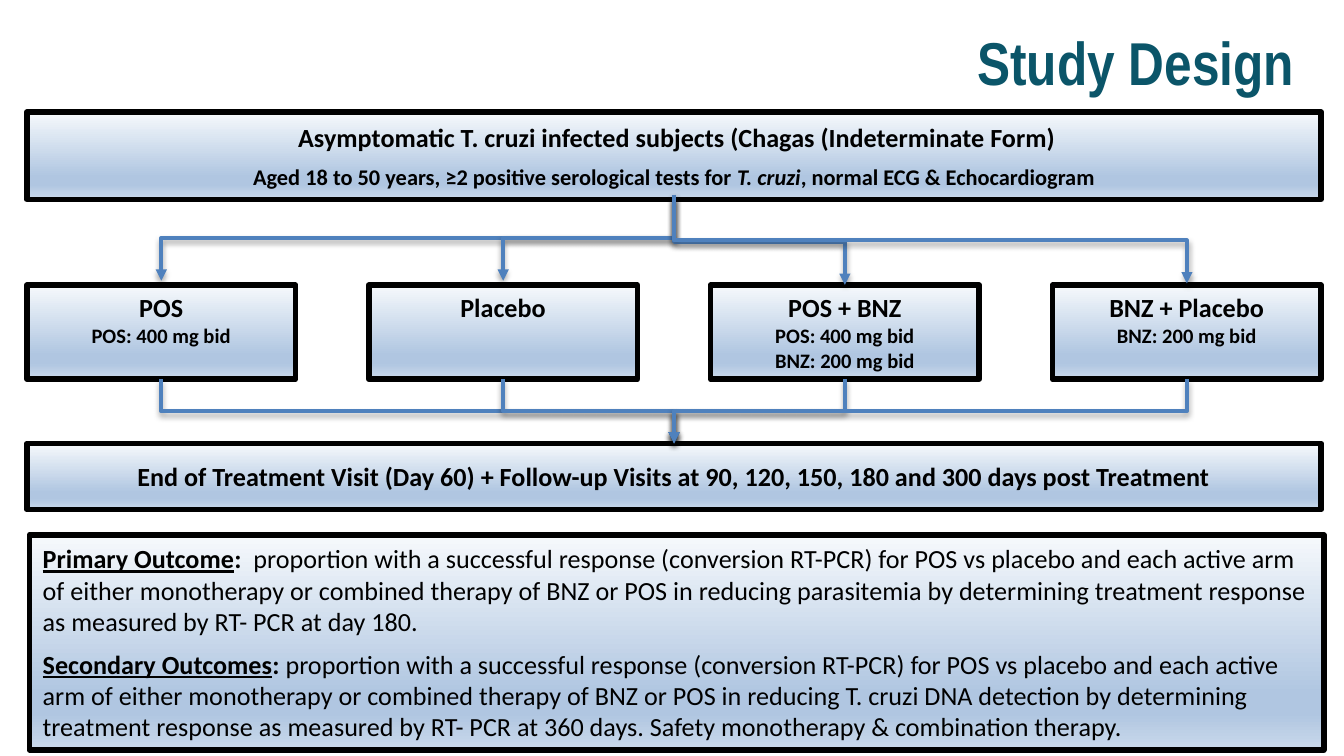
import copy

import pptx
import pptx.dml.color
import pptx.enum.shapes
import pptx.enum.text
import pptx.oxml
import pptx.oxml.ns
import pptx.util

Pt = pptx.util.Pt
RGBColor = pptx.dml.color.RGBColor
ALIGN = pptx.enum.text.PP_ALIGN
ANCHOR = pptx.enum.text.MSO_ANCHOR

TEAL = RGBColor(0x0B, 0x55, 0x69)
BLACK = RGBColor(0, 0, 0)
BLUE = RGBColor(0x4F, 0x81, 0xBD)
PALE = RGBColor(0xF6, 0xF9, 0xFC)
MID = RGBColor(0xB0, 0xC6, 0xE1)
LIGHT = RGBColor(0xCA, 0xD9, 0xEB)
GRADIENT = [(0, PALE), (0.74, MID), (0.83, MID), (1, LIGHT)]

NS = pptx.oxml.ns.nsdecls("a")
ARROWHEAD = f'<a:tailEnd {NS} type="triangle"/>'
SHADOW = (
    f'<a:effectLst {NS}><a:outerShdw blurRad="40000" dist="20000" dir="5400000" rotWithShape="0">'
    '<a:srgbClr val="000000"><a:alpha val="38000"/></a:srgbClr></a:outerShdw></a:effectLst>'
)


def add_panel(left, top, width, height, paragraphs, align=ALIGN.CENTER, anchor=ANCHOR.MIDDLE):
    """Draw a gradient box; a paragraph is (size, space before, [(text, styles)]), styles from "biu"."""
    box = page.shapes.add_shape(
        pptx.enum.shapes.MSO_SHAPE.RECTANGLE, Pt(left), Pt(top), Pt(width), Pt(height))
    box.shadow.inherit = False
    box.line.color.rgb = BLACK
    box.line.width = Pt(3)
    box.fill.gradient()
    box.fill.gradient_angle = 270
    stop_list = box._element.spPr.find(".//" + pptx.oxml.ns.qn("a:gsLst"))
    for _ in GRADIENT[2:]:
        stop_list.append(copy.deepcopy(stop_list[0]))
    for stop, (position, color) in zip(box.fill.gradient_stops, GRADIENT):
        stop.position = position
        stop.color.rgb = color

    frame = box.text_frame
    frame.word_wrap = True
    frame.vertical_anchor = anchor
    for index, (size, gap, spans) in enumerate(paragraphs):
        para = frame.add_paragraph() if index else frame.paragraphs[0]
        para.alignment = align
        if gap:
            para.space_before = Pt(gap)
        for text, styles in spans:
            span = para.add_run()
            span.text = text
            span.font.name = "Calibri"
            span.font.size = Pt(size)
            span.font.color.rgb = BLACK
            span.font.bold = "b" in styles
            span.font.italic = "i" in styles
            span.font.underline = "u" in styles


def add_elbow(start_x, start_y, end_x, end_y):
    """Draw an arrow that leaves downward: a sideways elbow turned a quarter about its centre."""
    center_x, center_y = (start_x + end_x) / 2, (start_y + end_y) / 2
    half_drop, half_span = (end_y - start_y) / 2, abs(end_x - start_x) / 2
    rightward = end_x > start_x
    reach = half_drop if rightward else -half_drop
    arrow = page.shapes.add_connector(
        pptx.enum.shapes.MSO_CONNECTOR.ELBOW,
        Pt(center_x + reach), Pt(center_y - half_span),
        Pt(center_x - reach), Pt(center_y + half_span))
    properties = arrow._element.spPr
    properties.xfrm.set("rot", str((270 if rightward else 90) * 60000))
    arrow.line.color.rgb = BLUE
    arrow.line.width = Pt(2)
    arrow.line._get_or_add_ln().append(pptx.oxml.parse_xml(ARROWHEAD))
    properties.append(pptx.oxml.parse_xml(SHADOW))


deck = pptx.Presentation()
deck.slide_width = Pt(720)
deck.slide_height = Pt(405)
page = deck.slides.add_slide(deck.slide_layouts[5])

# Title
title = page.shapes.title
title.left, title.top, title.width, title.height = Pt(36), Pt(10), Pt(664.6), Pt(46)
title.text_frame.vertical_anchor = ANCHOR.MIDDLE
heading = title.text_frame.paragraphs[0]
heading.alignment = ALIGN.RIGHT
span = heading.add_run()
span.text = "Study Design"
span.font.name = "Arial Narrow"
span.font.size = Pt(32.4)
span.font.bold = True
span.font.color.rgb = TEAL

# Full-width panels
LEFT, WIDTH = 14.4, 693.4
add_panel(LEFT, 60, WIDTH, 46.8, [
    (14, 0, [(" Asymptomatic T. cruzi infected subjects (Chagas (Indeterminate Form)", "b")]),
    (12, 6, [("Aged 18 to 50 years, ≥2 positive serological tests for ", "b"),
             ("T. cruzi", "bi"),
             (", normal ECG & Echocardiogram", "b")]),
])
add_panel(LEFT, 237.6, WIDTH, 35.4, [
    (14, 0, [("End of Treatment Visit (Day 60) + Follow-up Visits at 90, 120, 150, 180 "
              "and 300 days post Treatment", "b")]),
])
add_panel(15.8, 286.6, WIDTH, 115.2, [
    (14, 0, [("Primary Outcome", "bu"), (":  ", "b"),
             ("proportion with a successful response (conversion RT-PCR) for POS vs placebo and "
              "each active arm of either monotherapy or combined therapy of BNZ or POS in reducing "
              "parasitemia by determining treatment response as measured by RT- PCR at day 180.", "")]),
    (14, 6, [("Secondary Outcomes", "bu"), (": ", "b"),
             ("proportion with a successful response (conversion RT-PCR) for POS vs placebo and "
              "each active arm of either monotherapy or combined therapy of BNZ or POS in reducing "
              "T. cruzi DNA detection by determining treatment response as measured by RT- PCR at "
              "360 days. Safety monotherapy & combination therapy.", "")]),
], align=ALIGN.LEFT)

# Treatment arms: name, doses, top of the incoming arrow
ARMS = [
    ("POS", ["POS: 400 mg bid"], 104.4),
    ("Placebo", [], 104.4),
    ("POS + BNZ", ["POS: 400 mg bid", "BNZ: 200 mg bid"], 106.6),
    ("BNZ + Placebo", ["BNZ: 200 mg bid"], 105.8),
]
ARM_WIDTH, ARM_TOP, ARM_HEIGHT = 144, 152.8, 50.4
ARM_STEP = (WIDTH - ARM_WIDTH) / (len(ARMS) - 1)
HUB = LEFT + WIDTH / 2

for index, (name, doses, arrow_top) in enumerate(ARMS):
    arm_left = LEFT + index * ARM_STEP
    center = arm_left + ARM_WIDTH / 2
    lines = [(14, 0, [(name, "b")])] + [(11, 0, [(dose, "b")]) for dose in doses]
    add_panel(arm_left, ARM_TOP, ARM_WIDTH, ARM_HEIGHT, lines, anchor=ANCHOR.TOP)
    add_elbow(HUB, arrow_top, center, arrow_top + 46)
    add_elbow(center, ARM_TOP + ARM_HEIGHT, HUB, 237.6)

deck.save("out.pptx")
